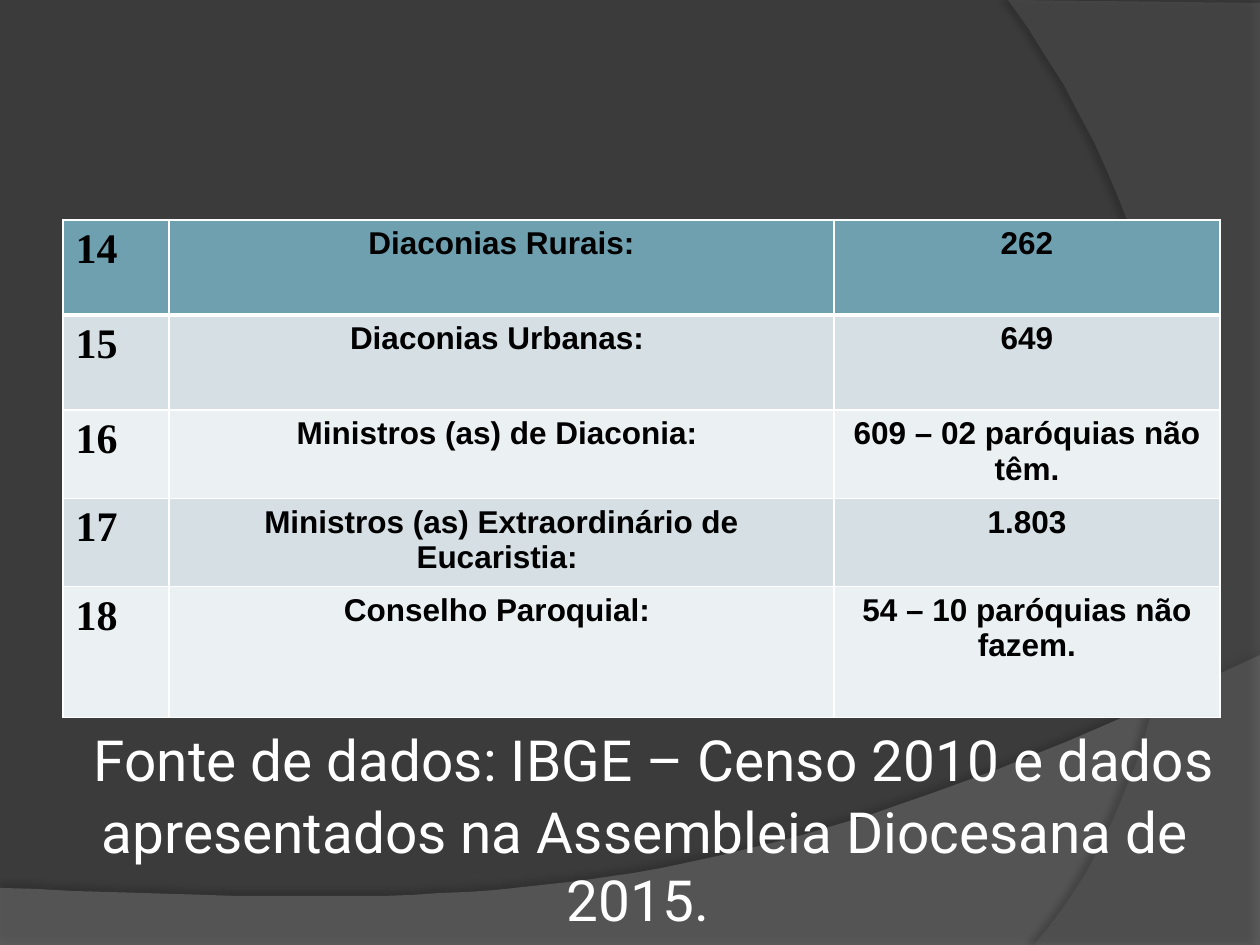
from lxml.etree import SubElement
from pptx import Presentation
from pptx.dml.color import RGBColor
from pptx.enum.text import MSO_ANCHOR, PP_ALIGN
from pptx.oxml.ns import qn
from pptx.util import Emu, Pt

EMU_PER_PX = 914400 / 126
CURVE_STEPS = 40

BACKGROUND = RGBColor(0x3B, 0x3B, 0x3B)
WAVE = RGBColor(0x7F, 0x7F, 0x7F)
ARC = RGBColor(0x5E, 0x5E, 0x5E)
WHITE = RGBColor(0xFF, 0xFF, 0xFF)
BLACK = RGBColor(0x00, 0x00, 0x00)
HEADER = RGBColor(0x6E, 0xA0, 0xB0)
BANDS = (RGBColor(0xEB, 0xF0, 0xF2), RGBColor(0xD5, 0xDF, 0xE4))

ROWS = [
    ("14", "Diaconias Rurais:", "262"),
    ("15", "Diaconias Urbanas: ", "649"),
    ("16", "Ministros (as) de Diaconia: ", "609 – 02 paróquias não têm."),
    ("17", "Ministros (as) Extraordinário de Eucaristia: ", "1.803"),
    ("18", "Conselho Paroquial: ", "54 – 10 paróquias não fazem."),
]
COLUMN_WIDTHS = (106, 665, 386)
ROW_HEIGHTS = (95, 95, 83, 83, 131)
SOURCE = ("Fonte de dados: IBGE – Censo 2010 e dados apresentados "
          "na Assembleia Diocesana de 2015. ")


def px(length):
    return Emu(round(length * EMU_PER_PX))


def bezier(start, control_1, control_2, end):
    """Points along a cubic curve, without its start."""
    points = []
    for step in range(1, CURVE_STEPS + 1):
        t = step / CURVE_STEPS
        weights = ((1 - t) ** 3, 3 * t * (1 - t) ** 2, 3 * t * t * (1 - t), t ** 3)
        points.append(tuple(
            sum(weight * value for weight, value in zip(weights, values))
            for values in zip(start, control_1, control_2, end)))
    return points


class SlideBuilder:
    def __init__(self, slide):
        self.slide = slide

    def background(self, color):
        fill = self.slide.background.fill
        fill.solid()
        fill.fore_color.rgb = color

    def curved_panel(self, corners, curve, color, opacity, shadow):
        """Fill straight corners closed by a curve from the last corner."""
        builder = self.slide.shapes.build_freeform(*corners[0], scale=EMU_PER_PX)
        builder.add_line_segments(corners[1:] + bezier(corners[-1], *curve), close=True)
        shape = builder.convert_to_shape()
        shape.fill.solid()
        shape.fill.fore_color.rgb = color
        shape.line.fill.background()
        shape.shadow.inherit = False
        properties = shape.element.spPr
        fill_color = properties.find(qn("a:solidFill")).find(qn("a:srgbClr"))
        SubElement(fill_color, qn("a:alpha"), val=str(opacity * 1000))
        self.add_shadow(properties.find(qn("a:effectLst")), *shadow)

    def add_shadow(self, effects, opacity, blur, distance, angle):
        outer = SubElement(effects, qn("a:outerShdw"), blurRad=str(Pt(blur)),
                           dist=str(Pt(distance)), dir=str(angle * 60000),
                           algn="ctr", rotWithShape="0")
        color = SubElement(outer, qn("a:srgbClr"), val=str(BLACK))
        SubElement(color, qn("a:alpha"), val=str(opacity * 1000))

    def style_run(self, run, font_name, size, color, bold=False):
        run.font.name = font_name
        run.font.size = Pt(size)
        run.font.color.rgb = color
        run.font.bold = bold

    def caption(self, left, top, width, height, parts):
        """Centred text made of (text, size) parts."""
        box = self.slide.shapes.add_textbox(px(left), px(top), px(width), px(height))
        frame = box.text_frame
        frame.word_wrap = True
        frame.vertical_anchor = MSO_ANCHOR.MIDDLE
        frame.margin_left = frame.margin_right = px(6)
        frame.margin_top = frame.margin_bottom = px(6)
        paragraph = frame.paragraphs[0]
        paragraph.alignment = PP_ALIGN.CENTER
        for text, size in parts:
            run = paragraph.add_run()
            run.text = text
            self.style_run(run, "Roboto", size, WHITE)

    def table(self, left, top, rows, widths, heights):
        frame = self.slide.shapes.add_table(
            len(rows), len(widths), px(left), px(top), px(sum(widths)), px(sum(heights)))
        table = frame.table
        table.first_row = table.horz_banding = False
        for column, width in zip(table.columns, widths):
            column.width = px(width)
        for row, height in zip(table.rows, heights):
            row.height = px(height)
        for row_index, texts in enumerate(rows):
            for column_index, text in enumerate(texts):
                self.cell(table.cell(row_index, column_index), text, row_index, column_index)

    def cell(self, cell, text, row_index, column_index):
        self.borders(cell, top=3 if row_index == 1 else 1, bottom=3 if row_index == 0 else 1)
        cell.fill.solid()
        cell.fill.fore_color.rgb = BANDS[row_index % 2] if row_index else HEADER
        cell.text_frame.text = text
        paragraph = cell.text_frame.paragraphs[0]
        if column_index == 0:
            font_name, size = "Times New Roman", 24
        else:
            font_name, size = "Arial", 18
            paragraph.alignment = PP_ALIGN.CENTER
        self.style_run(paragraph.runs[0], font_name, size, BLACK, bold=True)

    def borders(self, cell, top, bottom):
        properties = cell._tc.get_or_add_tcPr()
        for tag, width in (("lnL", 1), ("lnR", 1), ("lnT", top), ("lnB", bottom)):
            line = SubElement(properties, qn(f"a:{tag}"), w=str(Pt(width)))
            fill = SubElement(line, qn("a:solidFill"))
            SubElement(fill, qn("a:srgbClr"), val=str(WHITE))


def main():
    presentation = Presentation()
    presentation.slide_width = px(1260)
    presentation.slide_height = px(945)
    builder = SlideBuilder(presentation.slides.add_slide(presentation.slide_layouts[6]))

    # Background with its two curved panels
    builder.background(BACKGROUND)
    builder.curved_panel([(0, 888), (0, 946), (1260, 946), (1260, 655)],
                         [(704, 919), (493, 906), (0, 888)],
                         WAVE, 45, shadow=(35, 4, 3.5, 270))
    builder.curved_panel([(1260, 3), (1260, 945), (1034, 945)],
                         [(1178, 780), (1283, 378), (1008, 0)],
                         ARC, 40, shadow=(45, 4, 4, 180))

    # Data source
    builder.caption(69, 728, 1152, 186, [(" ", 41.4), (SOURCE, 32.4)])

    # Parish figures
    builder.table(63, 220, ROWS, COLUMN_WIDTHS, ROW_HEIGHTS)

    presentation.save("out.pptx")


if __name__ == "__main__":
    main()
